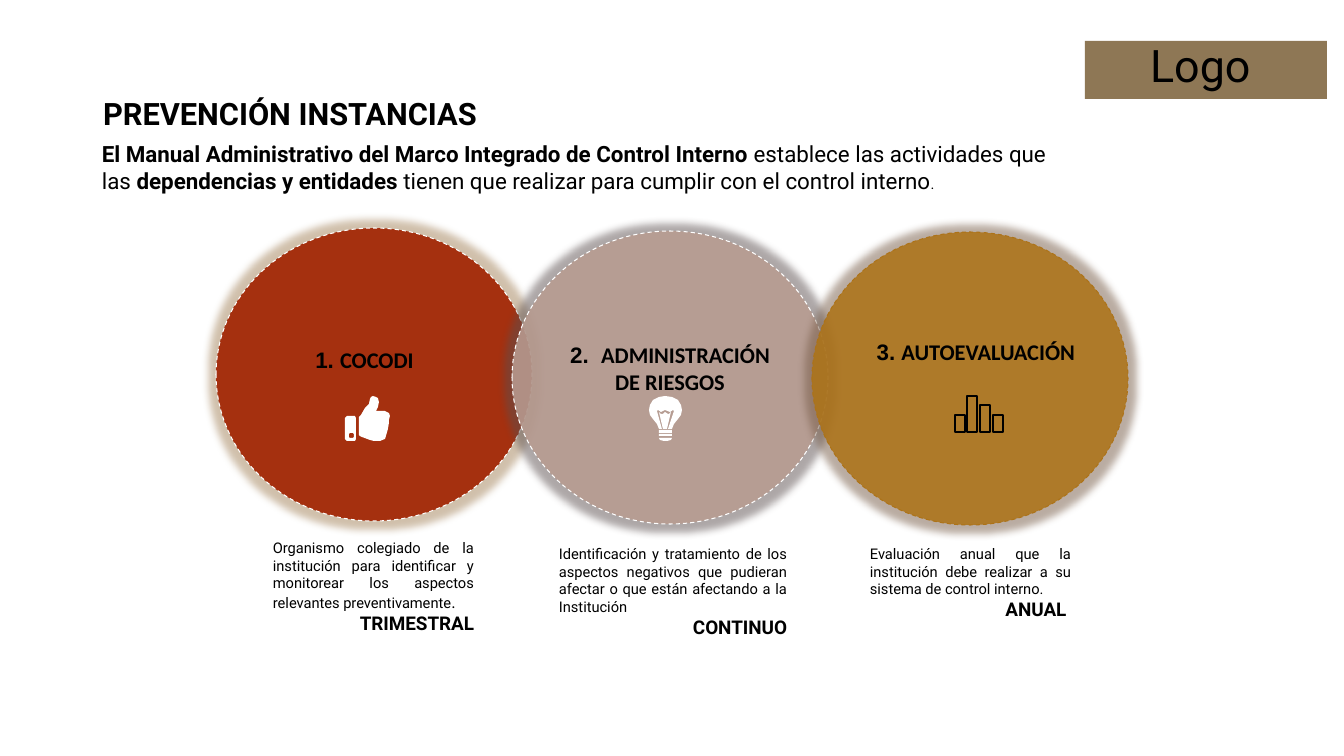
from lxml.etree import SubElement as Sub
from pptx import Presentation
from pptx.dml.color import RGBColor as Rgb
from pptx.enum.dml import MSO_LINE as Dash
from pptx.enum.shapes import MSO_SHAPE as Kind
from pptx.enum.text import MSO_ANCHOR as Anchor, MSO_AUTO_SIZE as Fit, PP_ALIGN as Align
from pptx.oxml.ns import qn
from pptx.util import Pt

SCALE = 914400 / 100.8
HEX = {
    "black": "000000", "white": "FFFFFF", "red": "A5300F", "rose": "B89C91",
    "gold": "AD7318", "brown": "8E7755",
    "tan": "A28158", "grey": "5C5050", "umber": "755A45",
}

HAND = [(373, 396), (371, 397), (370, 399), (369, 404), (365, 408), (361, 415),
        (359, 417), (359, 435), (360, 436), (362, 437), (370, 440), (374, 441),
        (380, 441), (385, 439), (386, 436), (388, 429), (389, 423), (389, 420),
        (390, 416), (389, 413), (385, 411), (376, 411), (378, 407), (379, 402),
        (378, 398), (376, 397)]
CUFF = [(347, 416), (345, 418), (345, 439), (347, 441), (355, 441), (356, 439),
        (356, 418), (355, 416)]
DOT = [(350, 433), (349, 434), (349, 437), (350, 438), (353, 438), (354, 437),
       (354, 434), (353, 433)]
GLASS = [(665, 396), (659, 397), (653, 400), (650, 405), (649, 410), (650, 415),
         (653, 419), (657, 424), (659, 429), (662, 429), (657, 411), (658, 410),
         (661, 412), (665, 410), (670, 412), (673, 410), (674, 411), (668, 429),
         (672, 429), (674, 424), (678, 419), (681, 415), (682, 410), (681, 405),
         (678, 400), (672, 397)]
WIRE = [(659, 412), (663, 429), (667, 429), (671, 412), (669, 414), (668, 414),
        (665, 412), (663, 414), (661, 414)]
TIP = [(659, 438), (660, 440), (664, 441), (667, 441), (671, 440), (672, 438)]


def px(*nums):
    return [round(num * SCALE) for num in nums]


def tint(name):
    return Rgb.from_string(HEX[name])


def paint(shape, name):
    shape.shadow.inherit = False
    shape.fill.solid()
    shape.fill.fore_color.rgb = tint(name)
    shape.line.fill.background()


def fade(node, rate):
    Sub(node, qn("a:alpha")).set("val", str(rate * 1000))


def write(par, runs, align=Align.LEFT):
    par.alignment = align
    for text, size, face, bold in runs:
        run = par.add_run()
        run.text = text
        font = run.font
        font.size, font.name, font.bold = Pt(size), face, bold
        font.color.rgb = tint("black")


def box(slide, place, pars, wrap=True):
    frame = slide.shapes.add_textbox(*px(*place)).text_frame
    frame.word_wrap = wrap
    frame.auto_size = Fit.SHAPE_TO_FIT_TEXT
    for num, (align, runs) in enumerate(pars):
        par = frame.add_paragraph() if num else frame.paragraphs[0]
        write(par, runs, align)


def disc(slide, left, top, name, edge, halo, rate):
    shape = slide.shapes.add_shape(Kind.OVAL, *px(left, top, 316, 293))
    paint(shape, name)
    shape.line.color.rgb = tint(edge)
    shape.line.width = Pt(0.75)
    shape.line.dash_style = Dash.DASH
    props = shape._element.spPr
    if rate < 100:
        fade(props.find(qn("a:solidFill"))[0], rate)
    glow = Sub(props.find(qn("a:effectLst")), qn("a:glow"))
    glow.set("rad", str(Pt(11)))
    hue = Sub(glow, qn("a:srgbClr"))
    hue.set("val", HEX[halo])
    fade(hue, 50)


def rect(left, top, wide, high):
    return [(left, top), (left + wide, top),
            (left + wide, top + high), (left, top + high)]


def trace(slide, *loops):
    pen = slide.shapes.build_freeform(*loops[0][0], scale=SCALE)
    pen.add_line_segments(loops[0][1:], close=True)
    for loop in loops[1:]:
        pen.move_to(*loop[0])
        pen.add_line_segments(loop[1:], close=True)
    shape = pen.convert_to_shape()
    paint(shape, "white")
    return shape


def bars(slide):
    base = 432
    for left, top in ((955, 415), (967, 396), (980, 405), (993, 415)):
        bar = trace(slide, rect(left, top, 10, base - top))
        bar.fill.background()
        bar.line.color.rgb = tint("black")
        bar.line.width = Pt(0.96)


def label(slide, place, mark, text, align, wrap):
    runs = [(mark, 16, "Arial", True), (text, 16, "Calibri", True)]
    box(slide, place, [(align, runs)], wrap)


def note(slide, place, text, term, stop=""):
    runs = [(text, 10.5, "Roboto", False)]
    if stop:
        runs.append((stop, 12, "Roboto", False))
    box(slide, place, [(Align.JUSTIFY, runs),
                       (Align.RIGHT, [(term, 13.5, "Roboto", True)])])


def head(slide):
    title = slide.shapes.title
    title.left, title.top, title.width, title.height = px(93, 40, 1159, 146)
    title.text_frame.vertical_anchor = Anchor.MIDDLE
    write(title.text_frame.paragraphs[0],
          [("PREVENCIÓN INSTANCIAS", 22, "Roboto", True)])
    box(slide, (92, 135, 982, 65), [(Align.LEFT, [
        ("El Manual Administrativo del Marco Integrado de Control Interno ", 16, "Roboto", True),
        ("establece las actividades que las ", 16, "Roboto", False),
        ("dependencias y entidades ", 16, "Roboto", True),
        ("tienen que realizar para cumplir con el control interno", 16, "Roboto", False),
        (".", 10.5, "Roboto", False)])])


def badge(slide):
    shape = slide.shapes.add_shape(Kind.RECTANGLE, *px(1085, 41, 242, 58))
    paint(shape, "brown")
    par = shape.text_frame.paragraphs[0]
    par.line_spacing = 0.8
    write(par, [("Logo ", 32, "Roboto", False)], Align.CENTER)


def main():
    deck = Presentation()
    deck.slide_width, deck.slide_height = px(1344, 756)
    slide = deck.slides.add_slide(deck.slide_layouts[5])
    head(slide)
    disc(slide, 216, 228, "red", "white", "tan", 100)
    disc(slide, 512, 231, "rose", "white", "grey", 87)
    disc(slide, 812, 232, "gold", "gold", "umber", 87)
    trace(slide, HAND, CUFF, DOT)
    trace(slide, GLASS, WIRE, rect(659, 430, 13, 3), rect(659, 434, 13, 2), TIP)
    bars(slide)
    label(slide, (304, 341, 126, 37), "1. ", "COCODI ", Align.CENTER, False)
    label(slide, (549, 336, 242, 65), "2.  ", "ADMINISTRACIÓN DE RIESGOS", Align.CENTER, True)
    label(slide, (865, 333, 225, 37), "3. ", "AUTOEVALUACIÓN ", Align.RIGHT, False)
    note(slide, (263, 534, 221, 107),
         "Organismo colegiado de la institución para identificar y monitorear "
         "los aspectos relevantes preventivamente", "TRIMESTRAL", ".")
    note(slide, (549, 540, 248, 105),
         "Identificación y tratamiento de los aspectos negativos que pudieran "
         "afectar o que están afectando a la Institución ", "CONTINUO")
    note(slide, (860, 540, 221, 87),
         "Evaluación anual que la institución debe realizar a su sistema de "
         "control interno.", "ANUAL ")
    badge(slide)
    deck.save("out.pptx")


if __name__ == "__main__":
    main()
